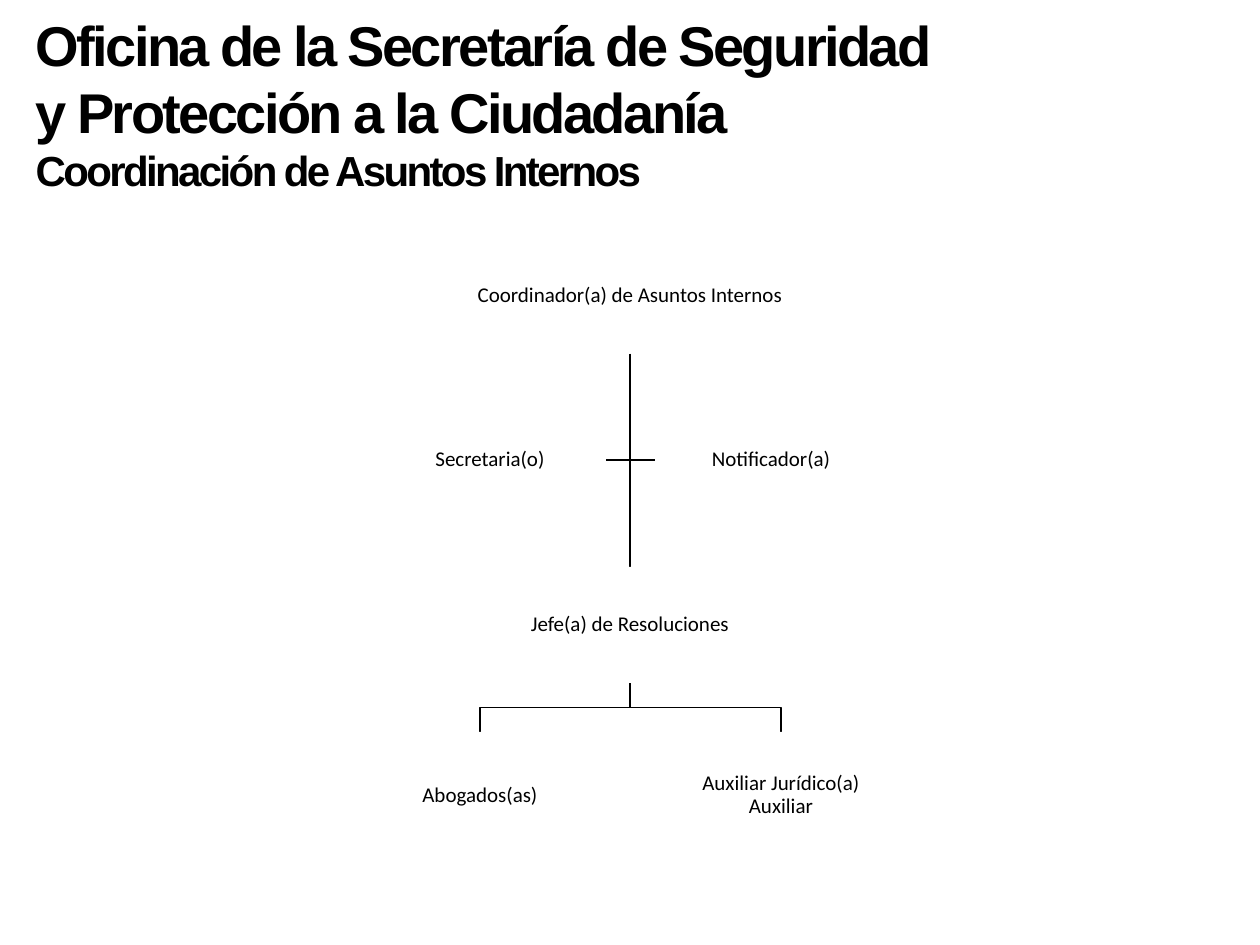
from pptx import Presentation
from pptx.dml.color import RGBColor
from pptx.enum.shapes import MSO_SHAPE
from pptx.enum.text import MSO_ANCHOR, MSO_AUTO_SIZE, PP_ALIGN
from pptx.util import Emu, Pt

PX = 914400 // 126
BLACK = RGBColor(0, 0, 0)
WHITE = RGBColor(255, 255, 255)

TITLE = [
    ("Oficina de la Secretaría de Seguridad y Protección a la Ciudadanía", 32),
    ("Coordinación de Asuntos Internos", 24),
]
# name: (center x, top, width, height, lines)
POSTS = {
    "head": (630, 238, 370, 116, ["Coordinador(a) de Asuntos Internos"]),
    "chief": (630, 567, 232, 116, ["Jefe(a) de Resoluciones"]),
    "lawyers": (480, 732, 252, 127, ["Abogados(as)"]),
    "aides": (781, 732, 252, 127, ["Auxiliar Jurídico(a)", "Auxiliar"]),
    "clerk": (490, 402, 232, 116, ["Secretaria(o)"]),
    "server": (771, 402, 232, 116, ["Notificador(a)"]),
}
STAFF = ["server", "clerk"]
TEAM = ["aides", "lawyers"]


def px(n):
    return Emu(round(n * PX))


def write(frame, rows, font, align, bold=False, track=None, space=1.0):
    """Fill a text frame with (text, point size) rows, one paragraph each."""
    frame.word_wrap = True
    frame.auto_size = MSO_AUTO_SIZE.NONE
    for i, (text, size) in enumerate(rows):
        para = frame.paragraphs[0] if i == 0 else frame.add_paragraph()
        para.alignment = align
        para.line_spacing = space
        run = para.add_run()
        run.text = text
        run.font.name = font
        run.font.size = Pt(size)
        run.font.bold = bold
        run.font.color.rgb = BLACK
        if track is not None:
            run.font._element.set("spc", str(track))


def trace(shapes, points):
    """Draw an open black line through the points."""
    start, *rest = [(px(x), px(y)) for x, y in points]
    pen = shapes.build_freeform(*start)
    pen.add_line_segments(rest, close=False)
    line = pen.convert_to_shape()
    line.shadow.inherit = False
    line.fill.background()
    line.line.color.rgb = BLACK
    line.line.width = Pt(1)


def post(shapes, mid, top, wide, high, lines, fill=True):
    box = shapes.add_shape(
        MSO_SHAPE.RECTANGLE, px(mid - wide / 2), px(top), px(wide), px(high))
    box.shadow.inherit = False
    box.line.fill.background()
    if fill:
        box.fill.solid()
        box.fill.fore_color.rgb = WHITE
    else:
        box.fill.background()
    frame = box.text_frame
    frame.vertical_anchor = MSO_ANCHOR.MIDDLE
    frame.margin_left = frame.margin_right = px(1)
    frame.margin_top = frame.margin_bottom = px(1)
    write(frame, [(text, 12) for text in lines], "Calibri",
          PP_ALIGN.CENTER, space=0.9)


def main():
    deck = Presentation()
    deck.slide_width, deck.slide_height = px(1260), px(945)
    slide = deck.slides.add_slide(deck.slide_layouts[5])
    shapes = slide.shapes

    title = shapes.title
    title.left, title.top, title.width, title.height = map(px, (23, 4, 940, 199))
    title.text_frame.vertical_anchor = MSO_ANCHOR.TOP
    write(title.text_frame, TITLE, "Arial", PP_ALIGN.LEFT, bold=True, track=-150)

    trunk, top, _, high, _ = POSTS["head"]
    start = top + high
    for name in STAFF:
        mid, top, wide, high, _ = POSTS[name]
        side = mid - wide / 2 if mid > trunk else mid + wide / 2
        level = top + high / 2
        trace(shapes, [(trunk, start), (trunk, level), (side, level)])

    _, top, _, high, _ = POSTS["chief"]
    base = top + high
    for name in TEAM:
        mid, end = POSTS[name][:2]
        bus = (base + end) / 2
        trace(shapes, [(trunk, base), (trunk, bus), (mid, bus), (mid, end)])
    trace(shapes, [(trunk, start), (trunk, top)])

    for name, place in POSTS.items():
        post(shapes, *place, fill=name != "head")
    deck.save("out.pptx")


if __name__ == "__main__":
    main()
